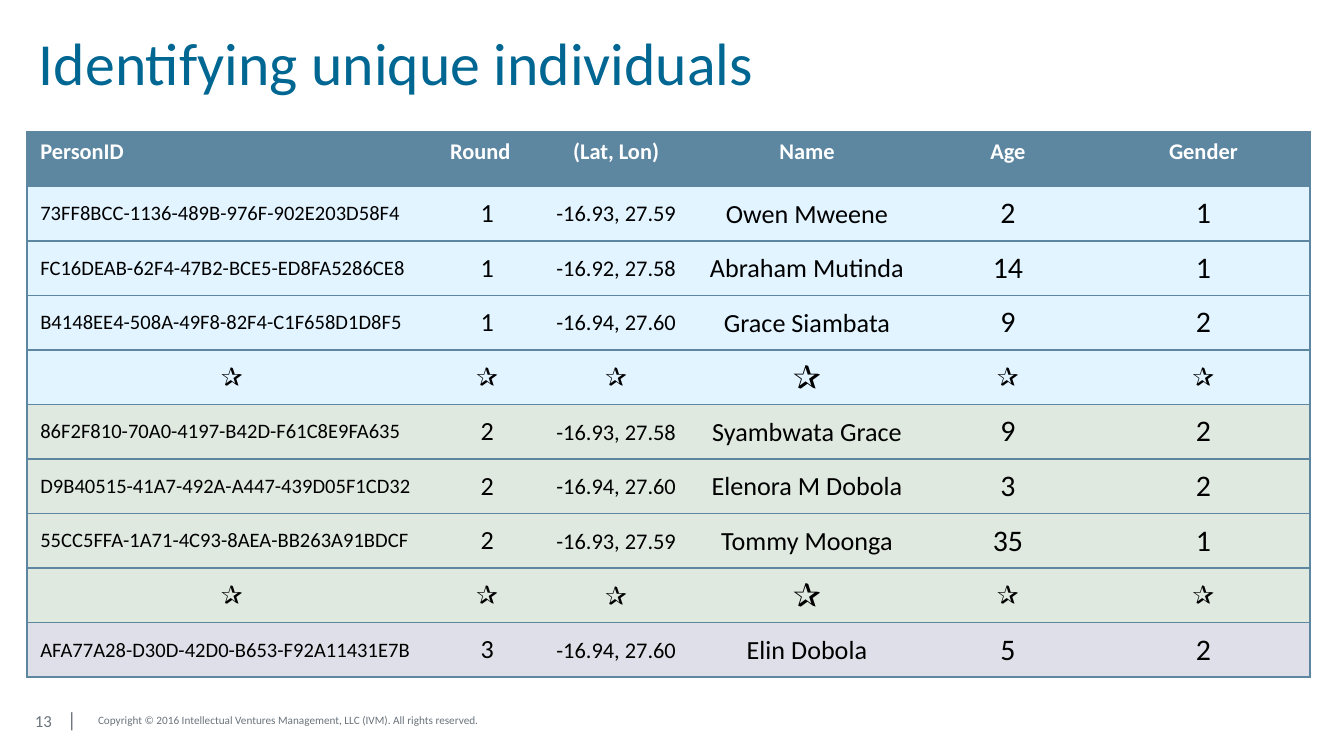
from lxml import etree
from pptx import Presentation
from pptx import util as u
from pptx.dml.color import RGBColor
from pptx.enum import text
from pptx.oxml.ns import qn

FONT, GREY, STEEL = "Calibri", "6A737B", "5D87A1"
BLUE, GREEN, LILAC = "E1F4FF", "DFE9E0", "DFDFE9"
LEFT, CENTER = text.PP_ALIGN.LEFT, text.PP_ALIGN.CENTER
TOP, MIDDLE = text.MSO_ANCHOR.TOP, text.MSO_ANCHOR.MIDDLE


def style(run, size, color, bold=False):
    run.font.name, run.font.size, run.font.bold = FONT, u.Pt(size), bold
    run.font.color.rgb = RGBColor.from_string(color)


def add_text(box, words, inset_x, inset_y, anchor):
    shape = slide.shapes.add_textbox(*(u.Inches(length) for length in box))
    frame = shape.text_frame
    frame.word_wrap = True
    frame.margin_left = frame.margin_right = u.Inches(inset_x)
    frame.margin_top = frame.margin_bottom = u.Inches(inset_y)
    frame.vertical_anchor = anchor
    frame.text = words
    return frame.paragraphs[0]


# Widescreen slide, 16:9
presentation = Presentation()
WIDTH = 10
HEIGHT = WIDTH * 9 / 16
presentation.slide_width, presentation.slide_height = u.Inches(WIDTH), u.Inches(HEIGHT)
slide = presentation.slides.add_slide(presentation.slide_layouts[6])
margin = 0.02 * WIDTH
content_width = 0.955 * WIDTH

# Footer: page number, bar and copyright line
paragraph = add_text((margin, 5.15, 0.55, 0.41), "13\t", 0.06, 0.03, MIDDLE)
tabs = etree.SubElement(paragraph._p.get_or_add_pPr(), qn("a:tabLst"))
etree.SubElement(tabs, qn("a:tab"), pos=str(u.Inches(0.24)), algn="l")
style(paragraph.runs[0], 9, GREY)
bar = paragraph.add_run()
bar.text = "|"
style(bar, 11, GREY)

paragraph = add_text(
    (0.67, 5.26, 3.17, 0.3),
    "Copyright © 2016 Intellectual Ventures Management, LLC (IVM). All rights reserved.",
    0.06, 0.05, TOP)
style(paragraph.runs[0], 6, GREY)

# Title
paragraph = add_text((margin, 0.15, content_width, 0.67),
                     "Identifying unique individuals", 0.09, 0.04, TOP)
style(paragraph.runs[0], 32, "006692")

# Table contents: row fill, then one value per column
stars = ["✰"] * 6
rows = [
    (STEEL, ["PersonID", "Round", "(Lat, Lon)", "Name", "Age", "Gender"]),
    (BLUE, ["73FF8BCC-1136-489B-976F-902E203D58F4", "1", "-16.93, 27.59", "Owen Mweene", "2", "1"]),
    (BLUE, ["FC16DEAB-62F4-47B2-BCE5-ED8FA5286CE8", "1", "-16.92, 27.58", "Abraham Mutinda", "14", "1"]),
    (BLUE, ["B4148EE4-508A-49F8-82F4-C1F658D1D8F5", "1", "-16.94, 27.60", "Grace Siambata", "9", "2"]),
    (BLUE, stars),
    (GREEN, ["86F2F810-70A0-4197-B42D-F61C8E9FA635", "2", "-16.93, 27.58", "Syambwata Grace", "9", "2"]),
    (GREEN, ["D9B40515-41A7-492A-A447-439D05F1CD32", "2", "-16.94, 27.60", "Elenora M Dobola", "3", "2"]),
    (GREEN, ["55CC5FFA-1A71-4C93-8AEA-BB263A91BDCF", "2", "-16.93, 27.59", "Tommy Moonga", "35", "1"]),
    (GREEN, stars),
    (LILAC, ["AFA77A28-D30D-42D0-B653-F92A11431E7B", "3", "-16.94, 27.60", "Elin Dobola", "5", "2"]),
]
column_widths = [3.05, 0.75, 1.17, 1.67, 1.32, 1.59]
body_sizes = [11, 14, 12, 14, 16, 16]
star_sizes = [14, 14, 14, 18, 14, 14]
table_height = 4.06
last = len(column_widths) - 1

table = slide.shapes.add_table(
    len(rows), len(column_widths), u.Inches(margin), u.Inches(0.98),
    u.Inches(content_width), u.Inches(table_height)).table
table.horz_banding = False
for column, width in zip(table.columns, column_widths):
    column.width = u.Inches(width)

for r, (fill, values) in enumerate(rows):
    header, starred = r == 0, values is stars
    table.rows[r].height = u.Inches(table_height / len(rows))
    for c, value in enumerate(values):
        cell = table.cell(r, c)
        if c in (2, 3) and not header:
            cell.margin_left = cell.margin_right = cell.margin_top = u.Inches(0.01)
            cell.margin_bottom = 0
        cell.vertical_anchor = TOP if header else MIDDLE

        # Horizontal rules everywhere, vertical ones only on the outside
        drawn = {"lnL": c == 0, "lnR": c == last, "lnT": True, "lnB": True}
        for side, visible in drawn.items():
            line = etree.SubElement(cell._tc.get_or_add_tcPr(), qn("a:" + side), w=str(u.Pt(1)))
            paint = etree.SubElement(line, qn("a:solidFill" if visible else "a:noFill"))
            if visible:
                etree.SubElement(paint, qn("a:srgbClr"), val=STEEL)
        cell.fill.solid()
        cell.fill.fore_color.rgb = RGBColor.from_string(fill)

        cell.text_frame.text = value
        paragraph = cell.text_frame.paragraphs[0]
        at_left = not starred and (c == 0 or (header and c == 1))
        paragraph.alignment = LEFT if at_left else CENTER
        size = 12 if header else star_sizes[c] if starred else body_sizes[c]
        style(paragraph.runs[0], size, "FFFFFF" if header else "000000", header or starred)

presentation.save("out.pptx")
